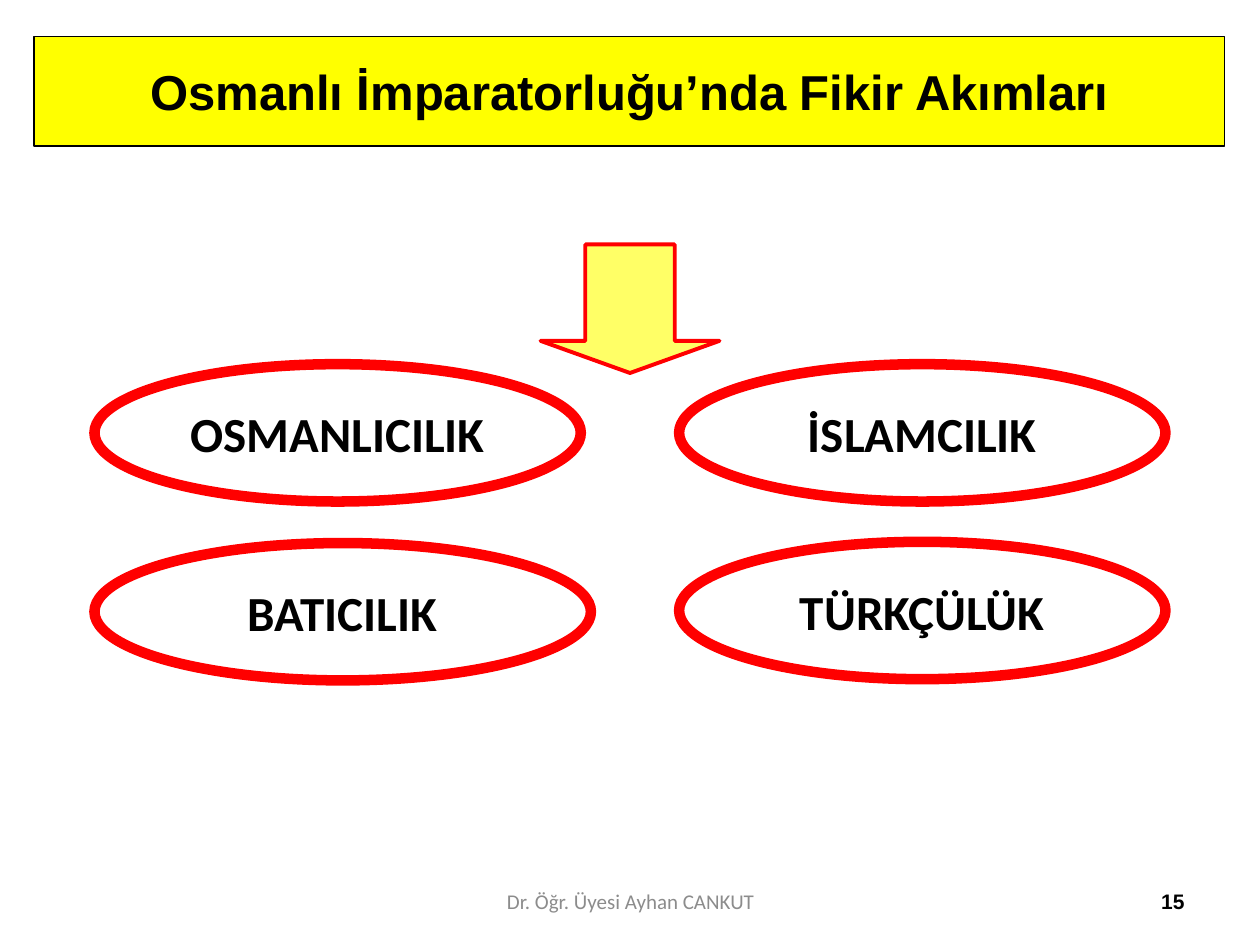
from lxml.etree import SubElement
from pptx import Presentation
from pptx.dml.color import RGBColor
from pptx.enum.shapes import MSO_SHAPE
from pptx.enum.text import MSO_ANCHOR, MSO_AUTO_SIZE, PP_ALIGN
from pptx.oxml.ns import qn
from pptx.util import Inches, Pt

COLORS = {
    "black": "000000",
    "white": "FFFFFF",
    "yellow": "FFFF00",
    "pale_yellow": "FFFF66",
    "red": "FF0000",
    "gray": "8C8C8C",
}
LEFT, TOP = 0.75, 2.89
COL_STEP, ROW_STEP = 4.64, 1.41
OVAL_W, OVAL_H = 3.86, 1.09
MOVEMENTS = [
    ("OSMANLICILIK", 0, 0, 0, 0),
    ("İSLAMCILIK", 1, 0, 0, 0),
    ("TÜRKÇÜLÜK", 1, 1, 0, 0),
    ("BATICILIK", 0, 1, 0.01, 0.08),
]


def rgb(name):
    return RGBColor.from_string(COLORS[name])


def place(sp, left, top, width, height):
    sp.left, sp.top = Inches(left), Inches(top)
    sp.width, sp.height = Inches(width), Inches(height)


def paint(sp, fill, line, weight):
    sp.fill.solid()
    sp.fill.fore_color.rgb = rgb(fill)
    sp.line.color.rgb = rgb(line)
    sp.line.width = Pt(weight)


def write(sp, text, size, font, color="black", bold=True, align=PP_ALIGN.CENTER, wrap=False):
    tf = sp.text_frame
    tf.text = text
    tf.word_wrap = wrap
    tf.auto_size = MSO_AUTO_SIZE.NONE
    tf.vertical_anchor = MSO_ANCHOR.MIDDLE
    p = tf.paragraphs[0]
    p.alignment = align
    r = p.runs[0]
    r.font.size = Pt(size)
    r.font.name = font
    r.font.bold = bold
    r.font.color.rgb = rgb(color)


def add_title(s, text):
    sp = s.shapes.title
    place(sp, 0.27, 0.29, 9.45, 0.87)
    geom = SubElement(sp.element.spPr, qn("a:prstGeom"), prst="roundRect")
    SubElement(geom, qn("a:avLst"))
    paint(sp, "yellow", "black", 0.75)
    write(sp, text, 28, "Arial")


def add_figure(s, kind, box, fill, weight):
    sp = s.shapes.add_shape(kind, *map(Inches, box))
    sp.shadow.inherit = False
    paint(sp, fill, "red", weight)
    return sp


def add_movement(s, text, col, row, drop, extra):
    box = (LEFT + col * COL_STEP, TOP + row * ROW_STEP + drop, OVAL_W + extra, OVAL_H)
    write(add_figure(s, MSO_SHAPE.OVAL, box, "white", 6), text, 28, "Calibri")


def add_arrow(s):
    sp = add_figure(s, MSO_SHAPE.DOWN_ARROW, (4.29, 1.94, 1.42, 1.02), "pale_yellow", 2.25)
    sp.adjustments[0] = 0.5
    sp.adjustments[1] = 0.25


def add_footer(s, text, left, width, **style):
    sp = s.shapes.add_textbox(Inches(left), Inches(6.95), Inches(width), Inches(0.4))
    write(sp, text, 12, wrap=True, **style)


def main():
    prs = Presentation()
    prs.slide_width, prs.slide_height = Inches(10), Inches(7.5)
    s = prs.slides.add_slide(prs.slide_layouts[5])
    add_title(s, "Osmanlı İmparatorluğu’nda Fikir Akımları")
    for movement in MOVEMENTS:
        add_movement(s, *movement)
    add_arrow(s)
    add_footer(s, "Dr. Öğr. Üyesi Ayhan CANKUT", 3.42, 3.17, font="Calibri", color="gray", bold=False)
    add_footer(s, "15", 7.17, 2.33, font="Arial", align=PP_ALIGN.RIGHT)
    prs.save("out.pptx")


if __name__ == "__main__":
    main()
